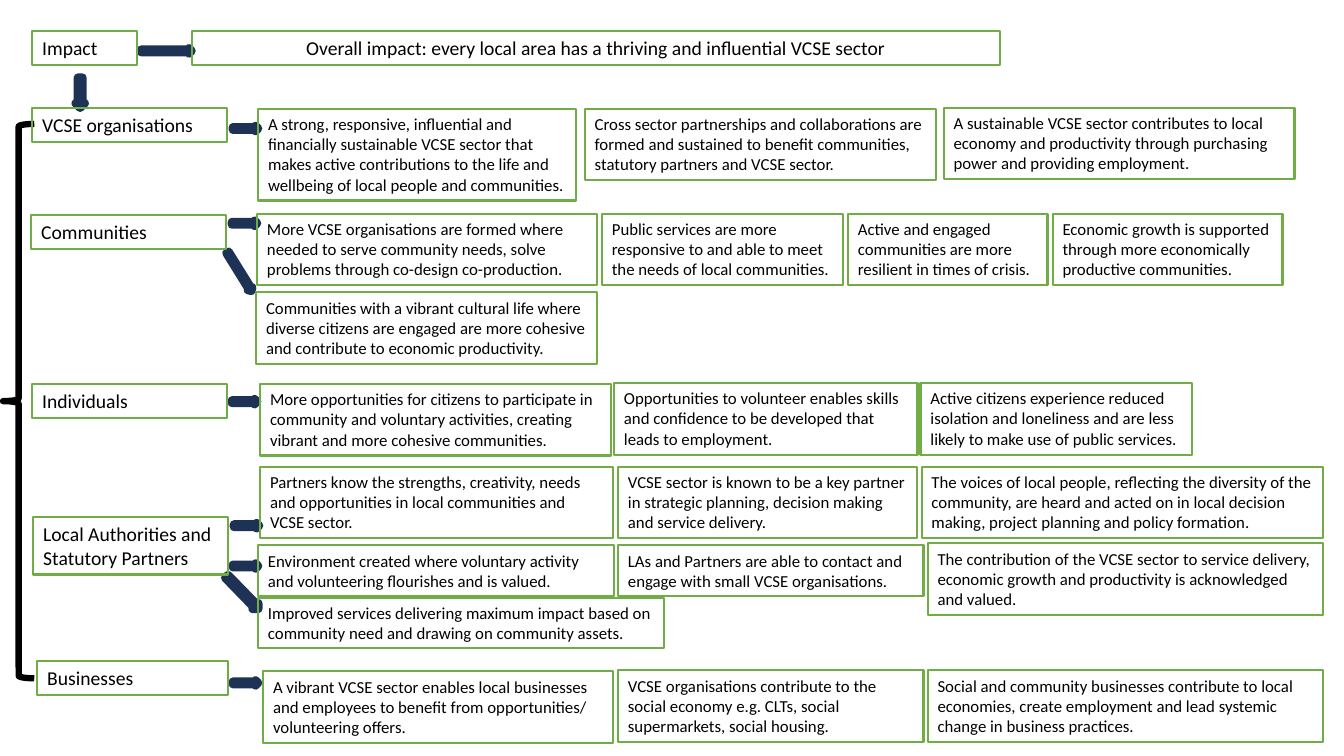
from pptx import Presentation
from pptx.dml.color import RGBColor
from pptx.enum.shapes import MSO_SHAPE
from pptx.enum.text import MSO_AUTO_SIZE, PP_ALIGN
from pptx.util import Inches, Pt

COLS, ROWS = 1333, 750
CELL = Inches(0.01)
HUES = {
    "edge": "70AD47", "text": "000000", "brace": "000000",
    "arrow": "4472C4", "rim": "1E3256",
}
HUE = {name: RGBColor.from_string(code) for name, code in HUES.items()}

deck = Presentation()
deck.slide_width = COLS * CELL
deck.slide_height = ROWS * CELL
slide = deck.slides.add_slide(deck.slide_layouts[6])


def add_box(left, top, width, high, text, size, align=PP_ALIGN.LEFT):
    box = slide.shapes.add_textbox(*(n * CELL for n in (left, top, width, high)))
    box.line.color.rgb = HUE["edge"]
    box.line.width = Pt(1.5)
    frame = box.text_frame
    frame.word_wrap = True
    frame.auto_size = MSO_AUTO_SIZE.SHAPE_TO_FIT_TEXT
    para = frame.paragraphs[0]
    para.text = text
    para.alignment = align
    para.font.name = "Calibri"
    para.font.size = Pt(size)
    para.font.color.rgb = HUE["text"]


def add_mark(kind, left, top, width, high, line, weight, turn=0):
    mark = slide.shapes.add_shape(kind, *(n * CELL for n in (left, top, width, high)))
    mark.shadow.inherit = False
    mark.rotation = turn
    mark.line.color.rgb = HUE[line]
    mark.line.width = Pt(weight)
    return mark


arrows = [
    (MSO_SHAPE.DOWN_ARROW, 75, 77, 9, 30, 0),
    (MSO_SHAPE.RIGHT_ARROW, 140, 48, 50, 5, 0),
    (MSO_SHAPE.RIGHT_ARROW, 215, 267, 45, 5, 58.2),
    (MSO_SHAPE.RIGHT_ARROW, 218, 584, 45, 8, 45.8),
]
for left, top in [(231, 125), (230, 219), (230, 396), (232, 519), (231, 559), (231, 675)]:
    arrows.append((MSO_SHAPE.RIGHT_ARROW, left, top, 25, 5, 0))
for kind, left, top, width, high, turn in arrows:
    arrow = add_mark(kind, left, top, width, high, "rim", 6, turn)
    arrow.fill.solid()
    arrow.fill.fore_color.rgb = HUE["arrow"]

brace = add_mark(MSO_SHAPE.LEFT_BRACE, 3, 123, 31, 550, "brace", 4.5)
brace.fill.background()

labels = [
    (32, 31, 104, 34, "Impact"),
    (32, 107, 193, 34, "VCSE organisations"),
    (31, 213, 193, 34, "Communities"),
    (32, 381, 193, 34, "Individuals"),
    (33, 513, 193, 57, "Local Authorities and Statutory Partners"),
    (37, 656, 189, 34, "Businesses"),
]
for left, top, width, high, text in labels:
    add_box(left, top, width, high, text, 14)
add_box(190, 31, 802, 34,
        "Overall impact: every local area has a thriving and influential VCSE sector",
        14, PP_ALIGN.CENTER)

TALL = {2: 50, 3: 71, 4: 91}
goals = [
    (256, 108, 315, 4, "A strong, responsive, influential and financially sustainable VCSE sector that makes active contributions to the life and wellbeing of local people and communities."),
    (580, 108, 348, 3, "Cross sector partnerships and collaborations are formed and sustained to benefit communities, statutory partners and VCSE sector."),
    (936, 107, 348, 3, "A sustainable VCSE sector contributes to local economy and productivity through purchasing power and providing employment."),
    (255, 212, 337, 3, "More VCSE organisations are formed where needed to serve community needs, solve problems through co-design co-production."),
    (597, 212, 239, 3, "Public services are more responsive to and able to meet the needs of local communities."),
    (841, 212, 198, 3, "Active and engaged communities are more resilient in times of crisis."),
    (1044, 212, 228, 3, "Economic growth is supported through more economically productive communities."),
    (254, 290, 338, 3, "Communities with a vibrant cultural life where diverse citizens are engaged are more cohesive and contribute to economic productivity."),
    (258, 381, 348, 3, "More opportunities for citizens to participate in community and voluntary activities, creating vibrant and more cohesive communities."),
    (609, 380, 301, 3, "Opportunities to volunteer enables skills and confidence to be developed that leads to employment."),
    (913, 380, 269, 3, "Active citizens experience reduced isolation and loneliness and are less likely to make use of public services."),
    (258, 463, 350, 3, "Partners know the strengths, creativity, needs and opportunities in local communities and VCSE sector."),
    (613, 463, 297, 3, "VCSE sector is known to be a key partner in strategic planning, decision making and service delivery."),
    (914, 463, 398, 3, "The voices of local people, reflecting the diversity of the community, are heard and acted on in local decision making, project planning and policy formation."),
    (256, 541, 353, 2, "Environment created where voluntary activity and volunteering flourishes and is valued."),
    (613, 541, 303, 2, "LAs and Partners are able to contact and engage with small VCSE organisations."),
    (920, 539, 392, 3, "The contribution of the VCSE sector to service delivery, economic growth and productivity is acknowledged and valued."),
    (256, 593, 403, 2, "Improved services delivering maximum impact based on community need and drawing on community assets."),
    (261, 666, 347, 3, "A vibrant VCSE sector enables local businesses and employees to benefit from opportunities/ volunteering offers."),
    (613, 665, 303, 3, "VCSE organisations contribute to the social economy e.g. CLTs, social supermarkets, social housing."),
    (920, 665, 392, 3, "Social and community businesses contribute to local economies, create employment and lead systemic change in business practices."),
]
for left, top, width, lines, text in goals:
    add_box(left, top, width, TALL[lines], text, 12)

deck.save("out.pptx")
